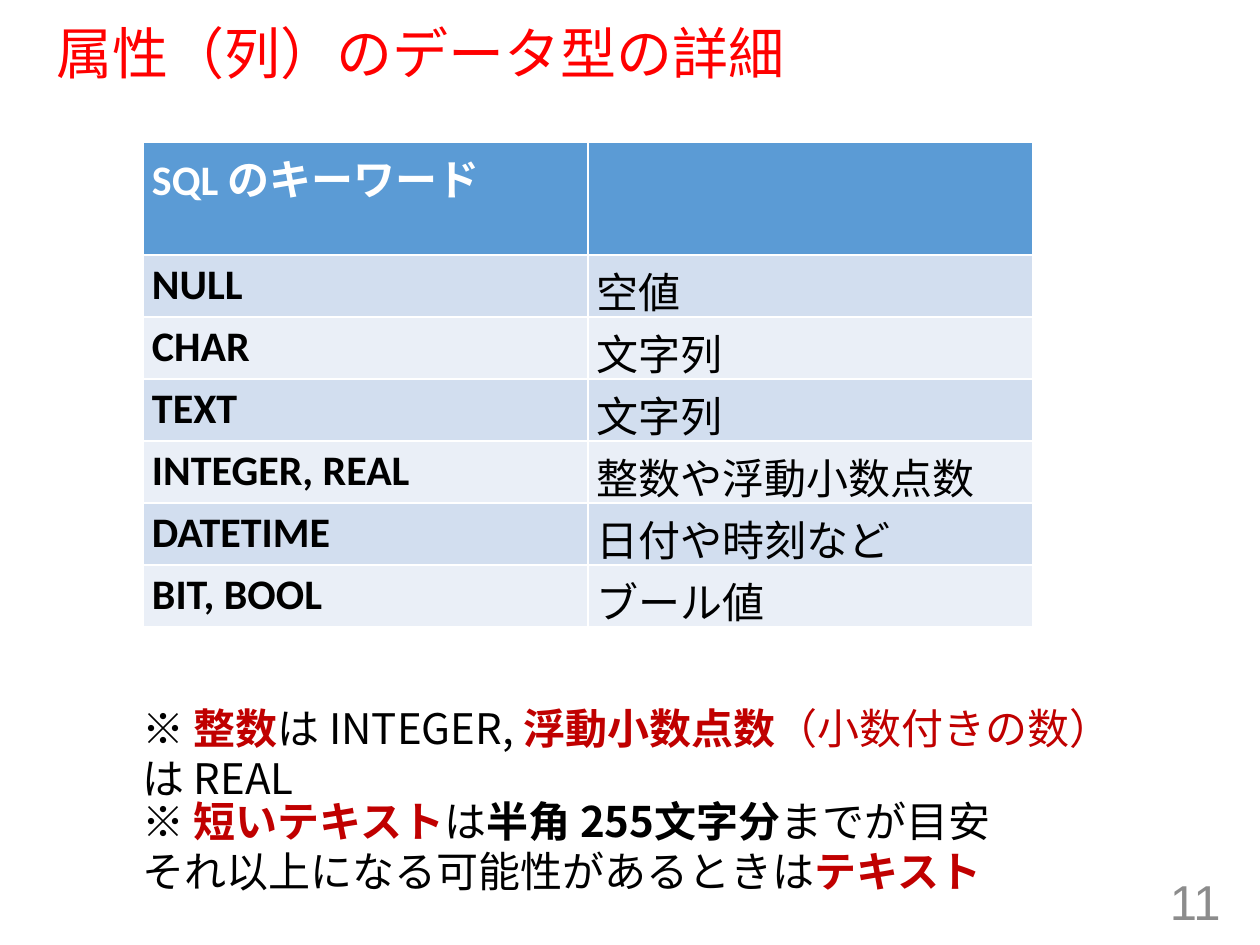
"""Build a slide that lists the SQL data types of table columns."""
from lxml.etree import SubElement
from pptx import Presentation
from pptx.dml.color import RGBColor as RGB
from pptx.enum.text import MSO_ANCHOR as Anchor, MSO_AUTO_SIZE as Fit, PP_ALIGN as Align
from pptx.oxml.ns import qn
from pptx.util import Emu, Pt

BLACK = RGB(0x00, 0x00, 0x00)
WHITE = RGB(0xFF, 0xFF, 0xFF)
RED = RGB(0xFF, 0x00, 0x00)
DARK = RGB(0xC0, 0x00, 0x00)
GRAY = RGB(0x8C, 0x8C, 0x8C)
BLUE = RGB(0x5B, 0x9B, 0xD5)
BANDS = RGB(0xD2, 0xDE, 0xEF), RGB(0xEA, 0xEF, 0xF7)
NOTO = "Noto Sans CJK JP"

ROWS = [
    ("SQL のキーワード", ""),
    ("NULL", "空値"),
    ("CHAR", "文字列"),
    ("TEXT", "文字列"),
    ("INTEGER, REAL", "整数や浮動小数点数"),
    ("DATETIME", "日付や時刻など"),
    ("BIT, BOOL", "ブール値"),
]
NUMBERS = [[
    ("※ ", BLACK, False), ("整数", DARK, True), ("は INTEGER, ", BLACK, False),
    ("浮動小数点数", DARK, True), ("（小数付きの数）", DARK, False), ("は REAL", BLACK, False),
]]
TEXTS = [
    [("※ ", BLACK, False), ("短いテキスト", DARK, True), ("は", BLACK, False),
     ("半角 255文字分", BLACK, True), ("までが目安", BLACK, False)],
    [("それ以上になる可能性があるときは", BLACK, False), ("テキスト", DARK, True)],
]


def px(n):
    return Emu(round(n * 914400 / 126))


def add_run(para, text, size, face, color, bold=False):
    run = para.add_run()
    run.text = text
    font = run.font
    font.size, font.name, font.bold = Pt(size), face, bold
    font.color.rgb = color
    SubElement(font._element, qn("a:ea")).set("typeface", NOTO)


def place(shape, x, y, w, h):
    shape.left, shape.top, shape.width, shape.height = map(px, (x, y, w, h))


def add_title(slide, text):
    title = slide.shapes.title
    place(title, 44, 24, 1166, 64)
    frame = title.text_frame
    frame.auto_size, frame.vertical_anchor = Fit.NONE, Anchor.MIDDLE
    para = frame.paragraphs[0]
    para.alignment, para.line_spacing = Align.LEFT, 0.9
    add_run(para, text, 32, "Arial", RED)


def add_number(slide, text):
    box = slide.shapes.add_textbox(*map(px, (949, 876, 284, 50)))
    frame = box.text_frame
    frame.word_wrap, frame.vertical_anchor = True, Anchor.MIDDLE
    para = frame.paragraphs[0]
    para.alignment = Align.RIGHT
    add_run(para, text, 28, "Arial", GRAY)


def fill_cell(cell, text, fill, color, bold):
    cell.margin_left = cell.margin_right = px(9)
    cell.margin_top = cell.margin_bottom = px(5)
    cell.fill.solid()
    cell.fill.fore_color.rgb = fill
    if text:
        add_run(cell.text_frame.paragraphs[0], text, 24, "Calibri", color, bold)


def add_grid(slide, rows):
    area = map(px, (143, 142, 890, 485))
    table = slide.shapes.add_table(len(rows), 2, *area).table
    for r, row in enumerate(rows):
        table.rows[r].height = px(62 if r else 113)
        fill = BANDS[(r - 1) % 2] if r else BLUE
        for c, text in enumerate(row):
            fill_cell(table.cell(r, c), text, fill, BLACK if r else WHITE, c == 0)


def add_note(slide, y, w, lines, wrap):
    box = slide.shapes.add_textbox(*map(px, (130, y, w, 115)))
    frame = box.text_frame
    frame.word_wrap, frame.auto_size = wrap, Fit.SHAPE_TO_FIT_TEXT
    for i, line in enumerate(lines):
        para = frame.add_paragraph() if i else frame.paragraphs[0]
        for text, color, bold in line:
            add_run(para, text, 24, NOTO, color, bold)


def main():
    deck = Presentation()
    deck.slide_width, deck.slide_height = px(1260), px(945)
    slide = deck.slides.add_slide(deck.slide_layouts[5])
    add_title(slide, "属性（列）のデータ型の詳細")
    add_number(slide, "11")
    add_grid(slide, ROWS)
    add_note(slide, 696, 1000, NUMBERS, True)
    add_note(slide, 789, 916, TEXTS, False)
    deck.save("out.pptx")


if __name__ == "__main__":
    main()
